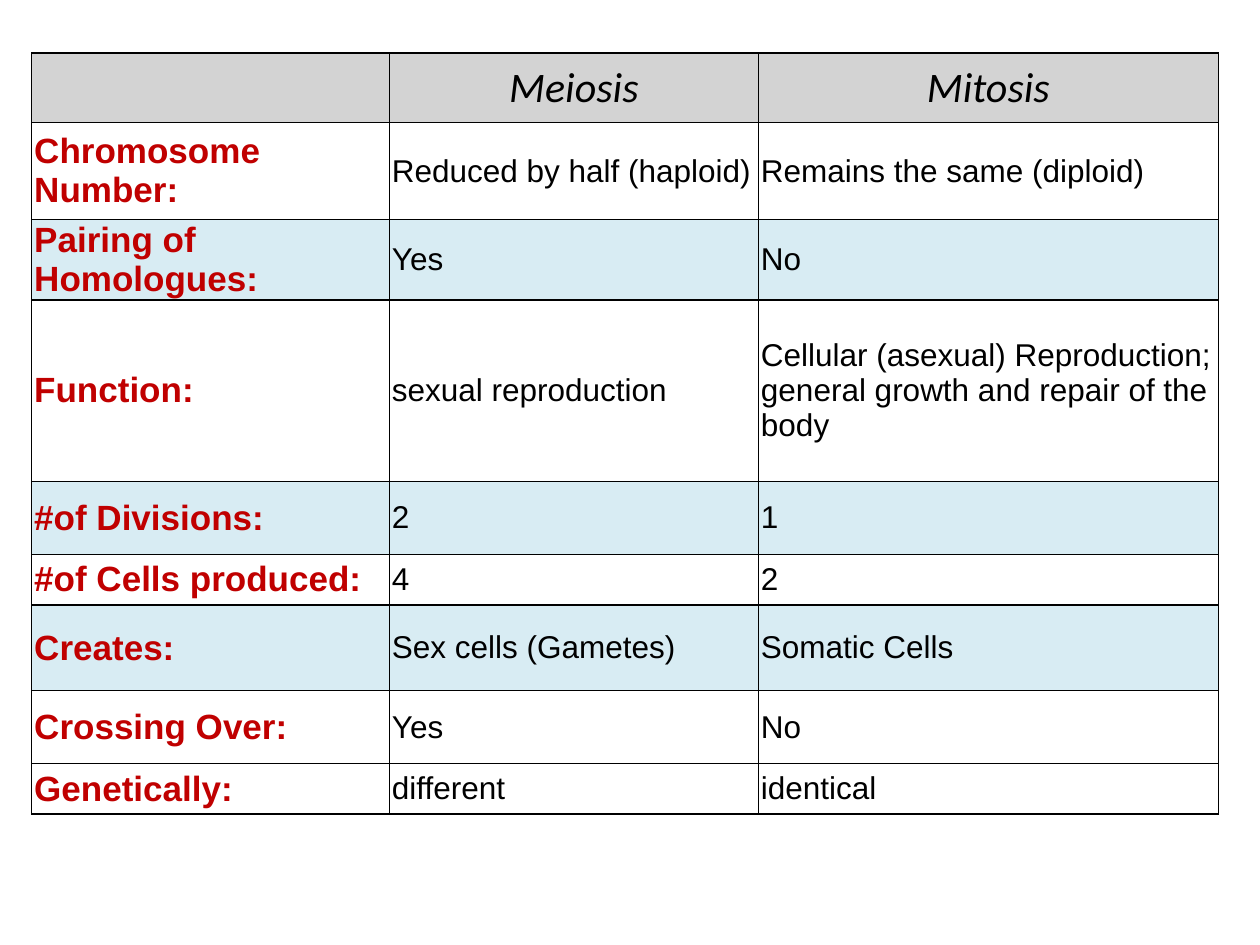
import pptx
import pptx.dml.color
import pptx.enum.text
import pptx.oxml.ns
import pptx.util
from lxml import etree

Cm = pptx.util.Cm
Pt = pptx.util.Pt
RGB = pptx.dml.color.RGBColor
ALIGN = pptx.enum.text.PP_ALIGN
qn = pptx.oxml.ns.qn

BLACK = RGB(0x00, 0x00, 0x00)
WHITE = RGB(0xFF, 0xFF, 0xFF)
RED = RGB(0xC0, 0x00, 0x00)
GRAY = RGB(0xD3, 0xD3, 0xD3)
BLUE = RGB(0xD8, 0xEC, 0xF3)

WIDTHS = (7.21, 7.44, 9.27)
HEAD = ("", "Meiosis", "Mitosis")
HEAD_HEIGHT = 1.4
# Row height in cm, fill, then the three cell texts
ROWS = (
    (1.96, WHITE, "Chromosome Number:", "Reduced by half (haploid)",
     "Remains the same (diploid)"),
    (1.02, BLUE, "Pairing of Homologues:", "Yes", "No"),
    (3.66, WHITE, "Function:", "sexual reproduction",
     "Cellular (asexual) Reproduction; general growth and repair of the body"),
    (1.47, BLUE, "#of Divisions:", "2", "1"),
    (1.02, WHITE, "#of Cells produced:", "4", "2"),
    (1.73, BLUE, "Creates:", "Sex cells (Gametes)", "Somatic Cells"),
    (1.47, WHITE, "Crossing Over:", "Yes", "No"),
    (1.02, WHITE, "Genetically:", "different", "identical"),
)


def add_text(frame, text, size=18, font="Arial", color=BLACK,
             bold=False, italic=False, align=ALIGN.LEFT):
    para = frame.paragraphs[0]
    para.alignment = align
    run = para.add_run()
    run.text = text
    run.font.size = Pt(size)
    run.font.name = font
    run.font.color.rgb = color
    run.font.bold = bold
    run.font.italic = italic


def add_border(cell):
    props = cell._tc.get_or_add_tcPr()
    for side in ("a:lnL", "a:lnR", "a:lnT", "a:lnB"):
        line = etree.SubElement(props, qn(side), w=str(Pt(1)))
        fill = etree.SubElement(line, qn("a:solidFill"))
        etree.SubElement(fill, qn("a:srgbClr"), val=str(BLACK))


def fill_cell(cell, text, fill, pad, **style):
    add_border(cell)
    cell.fill.solid()
    cell.fill.fore_color.rgb = fill
    cell.vertical_anchor = pptx.enum.text.MSO_ANCHOR.MIDDLE
    cell.margin_left = cell.margin_right = Cm(0.05)
    cell.margin_top = cell.margin_bottom = Cm(pad)
    if text:
        add_text(cell.text_frame, text, **style)


def add_grid(slide):
    heights = [HEAD_HEIGHT] + [row[0] for row in ROWS]
    frame = slide.shapes.add_table(
        len(heights), len(WIDTHS), Cm(0.64), Cm(1.07),
        Cm(sum(WIDTHS)), Cm(sum(heights)))
    table = frame.table
    for col, width in zip(table.columns, WIDTHS):
        col.width = Cm(width)
    for row, height in zip(table.rows, heights):
        row.height = Cm(height)
    return table


def main():
    deck = pptx.Presentation()
    deck.slide_width = Cm(25.4)
    deck.slide_height = Cm(19.05)
    slide = deck.slides.add_slide(deck.slide_layouts[6])
    table = add_grid(slide)

    for col, text in enumerate(HEAD):
        fill_cell(table.cell(0, col), text, GRAY, 0, size=24,
                  font="Calibri", italic=True, align=ALIGN.CENTER)
    for row, (_, fill, label, *values) in enumerate(ROWS, 1):
        fill_cell(table.cell(row, 0), label, fill, 0.02,
                  size=20, color=RED, bold=True)
        for col, text in enumerate(values, 1):
            fill_cell(table.cell(row, col), text, fill, 0.02)
    deck.save("out.pptx")


if __name__ == "__main__":
    main()
